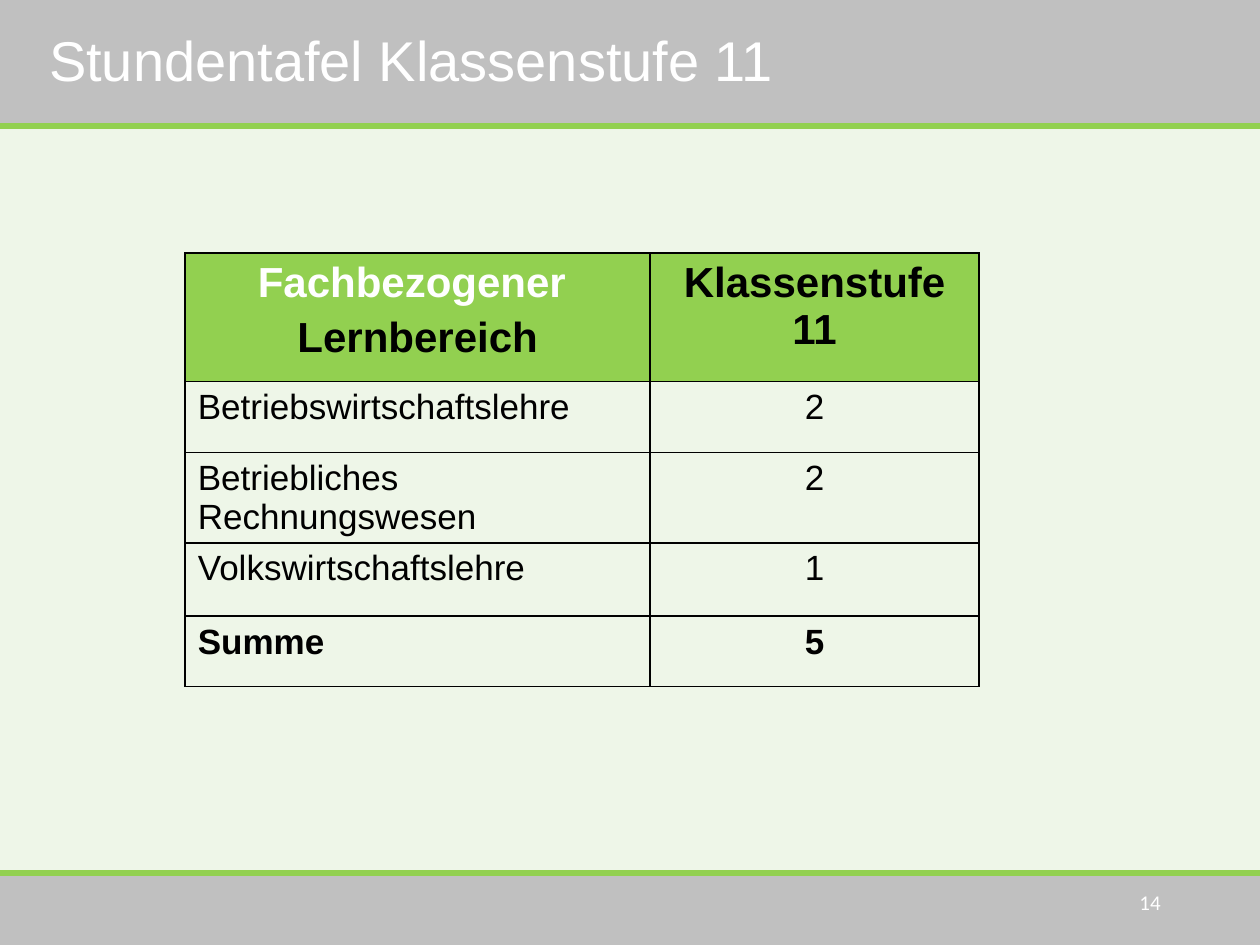
"""Build the timetable slide for class level 11."""
from dataclasses import dataclass

from lxml.etree import SubElement
from pptx import Presentation
from pptx.dml.color import RGBColor
from pptx.enum.shapes import MSO_CONNECTOR, MSO_SHAPE
from pptx.enum.text import MSO_ANCHOR, PP_ALIGN
from pptx.oxml.ns import qn
from pptx.util import Inches, Pt

WIDE, HIGH = 10, 7.5
COLORS = {"back": "EEF6E8", "band": "C0C0C0", "green": "92D050",
          "white": "FFFFFF", "black": "000000"}


@dataclass
class Band:
    top: float
    height: float
    rule: float


@dataclass
class Row:
    height: float
    label: str
    value: str
    size: int = 20
    bold: bool = False
    head: bool = False


BANDS = [Band(0, 1, 1), Band(6.95, 0.55, 6.93)]
COLS = [3.69, 2.61]
ROWS = [
    Row(1.02, "Fachbezogener \nLernbereich", "Klassenstufe 11", 24, True, True),
    Row(0.56, "Betriebswirtschaftslehre", "2"),
    Row(0.56, "Betriebliches Rechnungswesen", "2"),
    Row(0.58, "Volkswirtschaftslehre", "1"),
    Row(0.56, "Summe", "5", bold=True),
]


def color(name: str) -> RGBColor:
    return RGBColor.from_string(COLORS[name])


def style(para, size: int, tint: str, align, bold=False, face="Arial") -> None:
    para.alignment = align
    font = para.font
    font.name, font.size, font.bold = face, Pt(size), bold
    font.color.rgb = color(tint)


def place(shape, left: float, top: float, width: float, height: float) -> None:
    shape.left, shape.top = Inches(left), Inches(top)
    shape.width, shape.height = Inches(width), Inches(height)


def draw_band(slide, band: Band) -> None:
    box = slide.shapes.add_shape(MSO_SHAPE.RECTANGLE, 0, Inches(band.top),
                                 Inches(WIDE), Inches(band.height))
    box.shadow.inherit = False
    box.fill.solid()
    box.fill.fore_color.rgb = color("band")
    box.line.fill.background()


def draw_rule(slide, top: float) -> None:
    rule = slide.shapes.add_connector(MSO_CONNECTOR.STRAIGHT, 0, Inches(top),
                                      Inches(WIDE), Inches(top))
    rule.line.color.rgb = color("green")
    rule.line.width = Pt(3.5)
    SubElement(rule.element.spPr, qn("a:effectLst"))


def add_border(cell) -> None:
    props = cell._tc.get_or_add_tcPr()
    for side in "LRTB":
        line = SubElement(props, qn(f"a:ln{side}"), w=str(Pt(1)))
        fill = SubElement(line, qn("a:solidFill"))
        SubElement(fill, qn("a:srgbClr"), val=COLORS["black"])


def fill_cell(cell, text: str, row: Row, align) -> None:
    add_border(cell)
    if row.head:
        cell.fill.solid()
        cell.fill.fore_color.rgb = color("green")
    else:
        cell.fill.background()
    cell.text = text
    paras = cell.text_frame.paragraphs
    for i, para in enumerate(paras):
        tint = "white" if i < len(paras) - 1 else "black"
        style(para, row.size, tint, align, row.bold)
        if i:
            para.space_before = Pt(row.size * 0.2)


def draw_table(slide) -> None:
    high = sum(row.height for row in ROWS)
    table = slide.shapes.add_table(len(ROWS), len(COLS), Inches(1.47), Inches(2.01),
                                   Inches(sum(COLS)), Inches(high)).table
    table.first_row = table.horz_banding = False
    for col, width in zip(table.columns, COLS):
        col.width = Inches(width)
    for i, row in enumerate(ROWS):
        table.rows[i].height = Inches(row.height)
        left = PP_ALIGN.CENTER if row.head else PP_ALIGN.LEFT
        fill_cell(table.cell(i, 0), row.label, row, left)
        fill_cell(table.cell(i, 1), row.value, row, PP_ALIGN.CENTER)


def draw_title(slide) -> None:
    title = slide.shapes.title
    slide.shapes.element.append(title.element)
    place(title, 0.29, 0, 6.69, 1)
    title.text = "Stundentafel Klassenstufe 11"
    title.text_frame.vertical_anchor = MSO_ANCHOR.MIDDLE
    para = title.text_frame.paragraphs[0]
    para.line_spacing = 0.9
    style(para, 32, "white", PP_ALIGN.LEFT)


def draw_number(slide) -> None:
    box = slide.shapes.add_textbox(Inches(7.06), Inches(6.96), Inches(2.25), Inches(0.4))
    frame = box.text_frame
    frame.word_wrap = True
    frame.vertical_anchor = MSO_ANCHOR.MIDDLE
    frame.text = "14"
    style(frame.paragraphs[0], 12, "white", PP_ALIGN.RIGHT, face="Calibri")


def main() -> None:
    deck = Presentation()
    deck.slide_width, deck.slide_height = Inches(WIDE), Inches(HIGH)
    slide = deck.slides.add_slide(deck.slide_layouts[5])
    slide.background.fill.solid()
    slide.background.fill.fore_color.rgb = color("back")
    for band in BANDS:
        draw_band(slide, band)
    for band in BANDS:
        draw_rule(slide, band.rule)
    draw_title(slide)
    draw_table(slide)
    draw_number(slide)
    deck.save("out.pptx")


if __name__ == "__main__":
    main()
